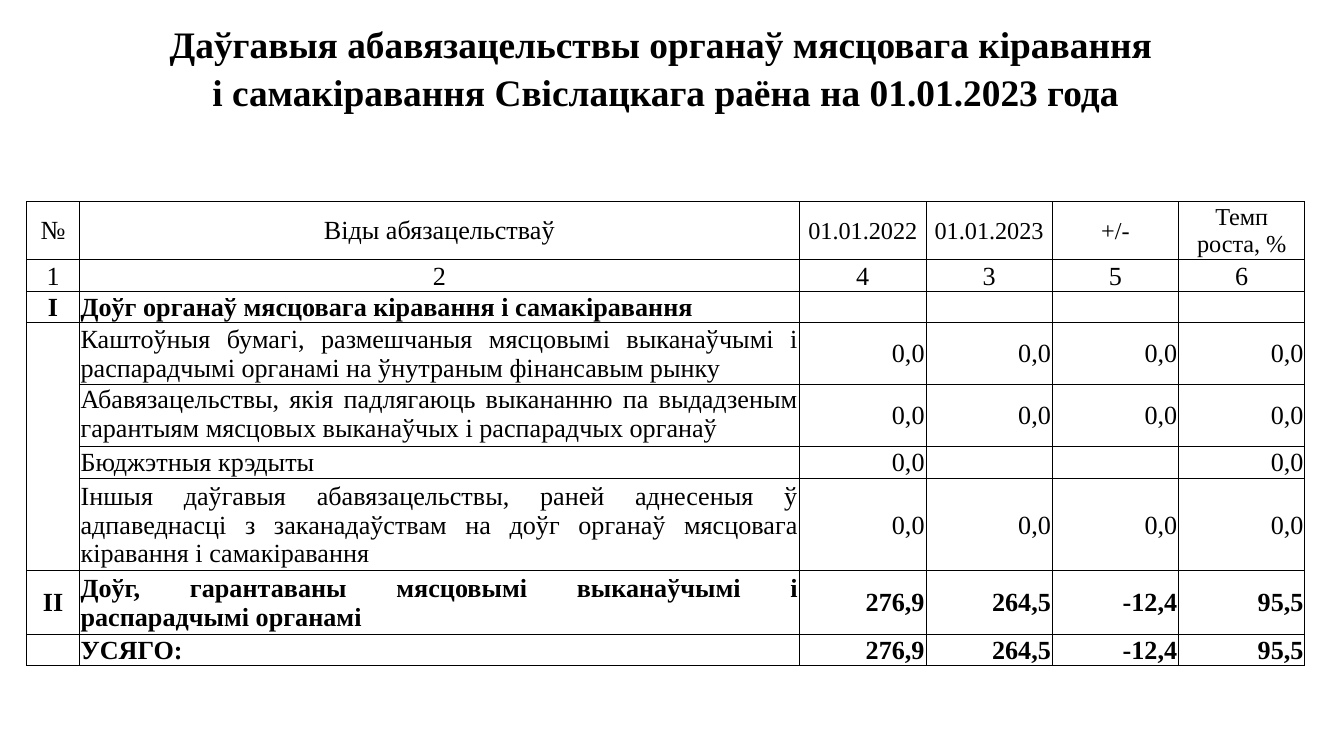
from lxml.etree import SubElement
from pptx import Presentation
from pptx.dml.color import RGBColor
from pptx.enum.text import MSO_ANCHOR, PP_ALIGN
from pptx.oxml.ns import qn
from pptx.util import Inches, Pt

BLACK = RGBColor(0, 0, 0)
WHITE = RGBColor(255, 255, 255)
FONT = "Times New Roman"

TITLE = ("Даўгавыя абавязацельствы органаў мясцовага кіравання \n"
         "і самакіравання Свіслацкага раёна на 01.01.2023 года")
HEADINGS = ["№", "Віды абязацельстваў", "01.01.2022", "01.01.2023", "+/-",
            "Темп\nроста, %"]
COLUMN_NUMBERS = ["1", "2", "4", "3", "5", "6"]
ZEROS = ["0,0"] * 4
TOTALS = ["276,9", "264,5", "-12,4", "95,5"]
DEBTS = [
    ["I", "Доўг органаў мясцовага кіравання і самакіравання", "", "", "", ""],
    ["", "Каштоўныя бумагі, размешчаныя мясцовымі выканаўчымі і "
         "распарадчымі органамі на ўнутраным фінансавым рынку", *ZEROS],
    ["", "Абавязацельствы, якія падлягаюць выкананню па выдадзеным "
         "гарантыям мясцовых выканаўчых і распарадчых органаў", *ZEROS],
    ["", "Бюджэтныя крэдыты", "0,0", "", "", "0,0"],
    ["", "Іншыя даўгавыя абавязацельствы, раней аднесеныя ў адпаведнасці "
         "з заканадаўствам на доўг органаў мясцовага кіравання і "
         "самакіравання", *ZEROS],
    ["II", "Доўг, гарантаваны мясцовымі выканаўчымі і распарадчымі органамі",
     *TOTALS],
    ["", "УСЯГО:", *TOTALS],
]

COLUMN_WIDTHS = [0.39, 5.36] + [0.94] * 4
TITLE_HEIGHTS = [0.38, 0.72, 0.38, 0.27]
BODY_HEIGHTS = [0.43, 0.24, 0.23, 0.46, 0.46, 0.24, 0.69, 0.47, 0.23]
TITLE_ROW = 1
HEADING_ROW = len(TITLE_HEIGHTS)
NUMBER_ROW = HEADING_ROW + 1
FIRST_DEBT_ROW = HEADING_ROW + 2
DETAIL_ROWS = range(FIRST_DEBT_ROW + 1, FIRST_DEBT_ROW + 5)
TOP_ALIGNED_ROW = DETAIL_ROWS[1]


def set_borders(cell, sides):
    """Draw thin black lines on the given sides (of "LRTB"), none elsewhere."""
    properties = cell._tc.get_or_add_tcPr()
    for side in "LRTB":
        line = SubElement(properties, qn(f"a:ln{side}"), w=str(Pt(0.5)))
        if side in sides:
            fill = SubElement(line, qn("a:solidFill"))
            SubElement(fill, qn("a:srgbClr"), val=str(BLACK))
        else:
            SubElement(line, qn("a:noFill"))


def write_cell(cell, text, size=14, bold=False, align=PP_ALIGN.CENTER,
               anchor=MSO_ANCHOR.MIDDLE, spacing=None):
    cell.margin_left = cell.margin_right = cell.margin_top = Inches(0.01)
    cell.margin_bottom = 0
    cell.vertical_anchor = anchor
    cell.text = text
    for paragraph in cell.text_frame.paragraphs:
        paragraph.alignment = align
        if spacing:
            paragraph.line_spacing = spacing
        paragraph.font.name = FONT
        paragraph.font.size = Pt(size)
        paragraph.font.bold = bold
        paragraph.font.color.rgb = BLACK


def border_sides(row, column):
    if row < HEADING_ROW:
        return "B" if row == HEADING_ROW - 1 else ""
    if column == 0 and row in DETAIL_ROWS:
        top = "T" if row == DETAIL_ROWS[0] else ""
        bottom = "B" if row == DETAIL_ROWS[-1] else ""
        return "LR" + top + bottom
    return "LRTB"


def fill_title_rows(table):
    last_column = len(COLUMN_WIDTHS) - 1
    for row in range(HEADING_ROW):
        cell = table.cell(row, 0)
        cell.merge(table.cell(row, last_column))
        if row == TITLE_ROW:
            write_cell(cell, TITLE, 20, True, anchor=MSO_ANCHOR.BOTTOM,
                       spacing=1.15)
        else:
            write_cell(cell, "")


def fill_heading_rows(table):
    for column, heading in enumerate(HEADINGS):
        write_cell(table.cell(HEADING_ROW, column), heading,
                   14 if column < 2 else 13)
        write_cell(table.cell(NUMBER_ROW, column), COLUMN_NUMBERS[column],
                   anchor=MSO_ANCHOR.BOTTOM)


def fill_debt_rows(table):
    for row, values in enumerate(DEBTS, FIRST_DEBT_ROW):
        is_total = row == FIRST_DEBT_ROW + len(DEBTS) - 1
        name_align = PP_ALIGN.LEFT if is_total else PP_ALIGN.JUSTIFY
        aligns = [PP_ALIGN.CENTER, name_align] + [PP_ALIGN.RIGHT] * 4
        for column, (value, align) in enumerate(zip(values, aligns)):
            at_top = row == TOP_ALIGNED_ROW and column == 1
            write_cell(table.cell(row, column), value,
                       bold=row not in DETAIL_ROWS, align=align,
                       anchor=MSO_ANCHOR.TOP if at_top else MSO_ANCHOR.MIDDLE)


def add_debt_table(slide, left, top):
    heights = TITLE_HEIGHTS + BODY_HEIGHTS
    table = slide.shapes.add_table(
        len(heights), len(COLUMN_WIDTHS), Inches(left), Inches(top),
        Inches(sum(COLUMN_WIDTHS)), Inches(sum(heights))).table
    table.first_row = table.horz_banding = False
    for column, width in zip(table.columns, COLUMN_WIDTHS):
        column.width = Inches(width)
    for row, height in zip(table.rows, heights):
        row.height = Inches(height)
    for row in range(len(heights)):
        for column in range(len(COLUMN_WIDTHS)):
            cell = table.cell(row, column)
            set_borders(cell, border_sides(row, column))
            cell.fill.solid()
            cell.fill.fore_color.rgb = WHITE
    fill_title_rows(table)
    fill_heading_rows(table)
    fill_debt_rows(table)


def main():
    presentation = Presentation()
    presentation.slide_width = Inches(10)
    presentation.slide_height = presentation.slide_width * 9 // 16
    slide = presentation.slides.add_slide(presentation.slide_layouts[6])
    add_debt_table(slide, 0.2, -0.25)
    presentation.save("out.pptx")


if __name__ == "__main__":
    main()
